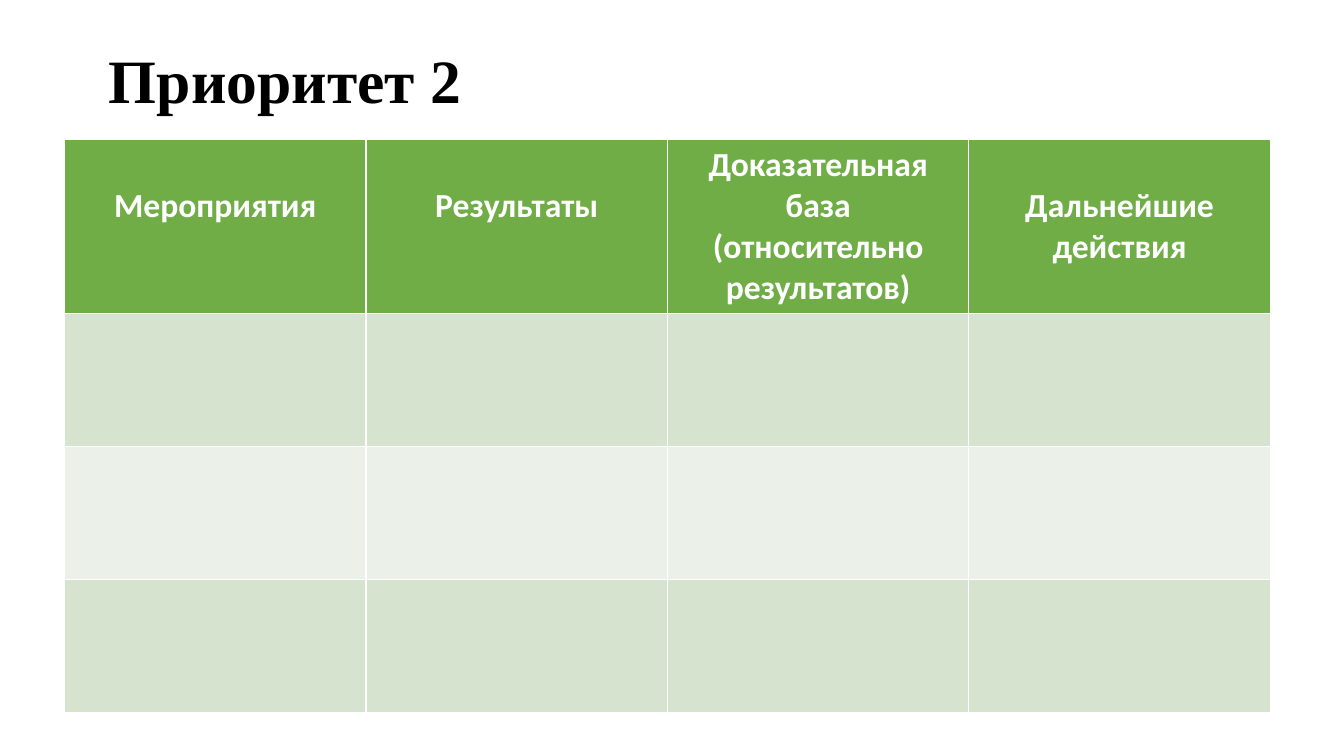
from pptx import Presentation
from pptx.dml.color import RGBColor
from pptx.enum import text
from pptx.util import Inches, Pt

TITLE = "Приоритет 2"
# Heading and whether it starts one line lower
HEADS = [
    ("Мероприятия", True),
    ("Результаты", True),
    ("Доказательная база (относительно результатов)", False),
    ("Дальнейшие действия", True),
]
BODY_ROWS = 3

BLACK = RGBColor(0x00, 0x00, 0x00)
WHITE = RGBColor(0xFF, 0xFF, 0xFF)
GREEN = RGBColor(0x70, 0xAD, 0x47)
BANDS = [RGBColor(0xD5, 0xE3, 0xCF), RGBColor(0xEB, 0xF1, 0xE9)]

LEFT, TOP, COL = 0.64, 1.38, 2.99
HEAD_H, BODY_H = 1.72, 1.32
PAD, LINE = 0.05, 0.41


def style(par, name, size, color, align):
    par.alignment = align
    font = par.font
    font.name, font.size, font.bold = name, Pt(size), True
    font.color.rgb = color


def paint(cell, color):
    cell.fill.solid()
    cell.fill.fore_color.rgb = color


def add_title(slide):
    title = slide.shapes.title
    title.left, title.top = Inches(0.98), Inches(0.1)
    title.width, title.height = Inches(11.5), Inches(1.45)
    frame = title.text_frame
    frame.text = TITLE
    frame.vertical_anchor = text.MSO_ANCHOR.MIDDLE
    par = frame.paragraphs[0]
    par.line_spacing = 0.9
    style(par, "Times New Roman", 44, BLACK, text.PP_ALIGN.LEFT)


def add_grid(slide):
    cols = len(HEADS)
    table = slide.shapes.add_table(
        BODY_ROWS + 1, cols, Inches(LEFT), Inches(TOP),
        Inches(COL * cols), Inches(HEAD_H + BODY_H * BODY_ROWS)).table
    for col in table.columns:
        col.width = Inches(COL)
    for r, row in enumerate(table.rows):
        row.height = Inches(BODY_H if r else HEAD_H)
        for cell in row.cells:
            paint(cell, BANDS[(r - 1) % 2] if r else GREEN)
    for cell, (head, lower) in zip(table.rows[0].cells, HEADS):
        cell.text = head
        cell.margin_top = Inches(PAD + LINE * lower)
        style(cell.text_frame.paragraphs[0], "Calibri", 24, WHITE,
              text.PP_ALIGN.CENTER)


def main():
    deck = Presentation()
    deck.slide_width, deck.slide_height = Inches(13.33), Inches(7.5)
    slide = deck.slides.add_slide(deck.slide_layouts[5])
    add_title(slide)
    add_grid(slide)
    deck.save("out.pptx")


if __name__ == "__main__":
    main()
